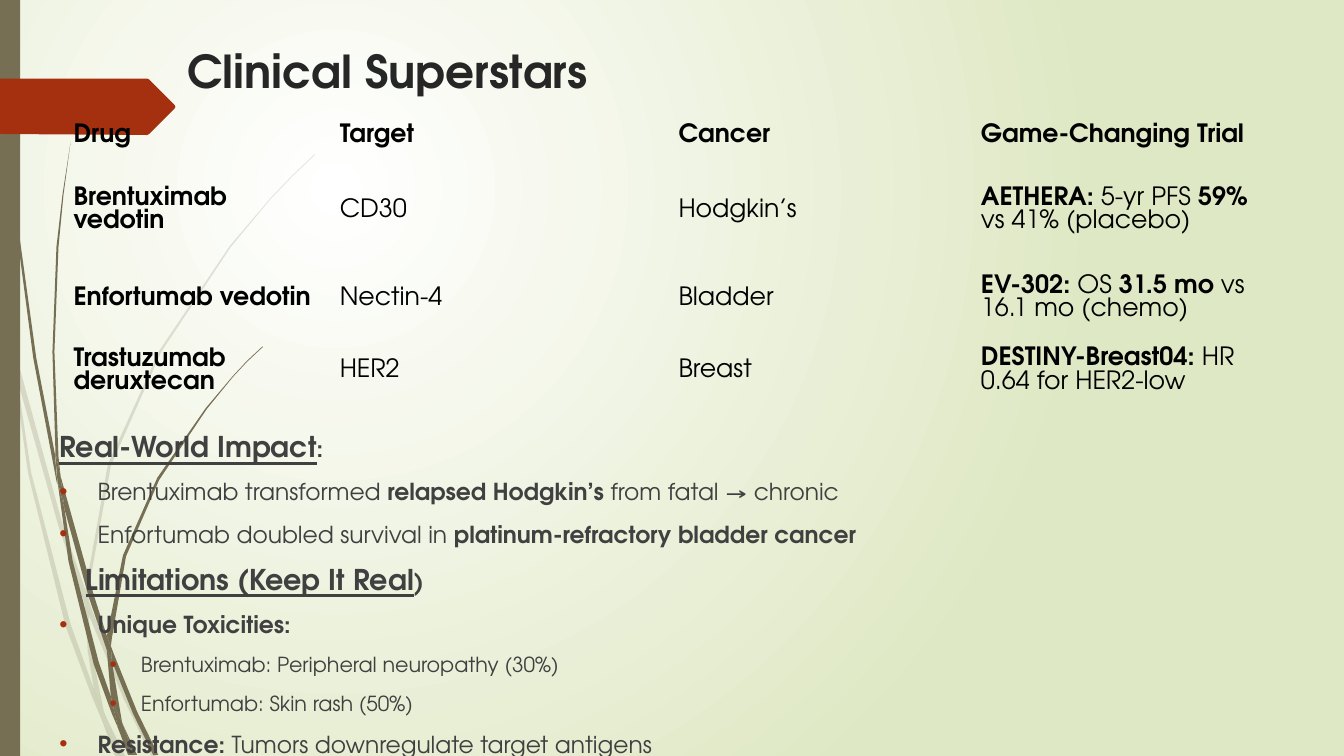
from dataclasses import dataclass
from lxml import etree
from pptx import Presentation
from pptx import util as u
from pptx.dml.color import RGBColor
from pptx.enum import shapes, text
from pptx.oxml.ns import qn

TITLE = "Clinical Superstars"
TRIALS = [
    ["**Drug**", "**Target**", "**Cancer**", "**Game-Changing Trial**"],
    ["**Brentuximab vedotin**", "CD30", "Hodgkin’s",
     "**AETHERA:** 5-yr PFS **59%** vs 41% (placebo)"],
    ["**Enfortumab vedotin**", "Nectin-4", "Bladder",
     "**EV-302:** OS **31.5 mo** vs 16.1 mo (chemo)"],
    ["**Trastuzumab deruxtecan**", "HER2", "Breast",
     "**DESTINY-Breast04:** HR 0.64 for HER2-low"],
]
NOTES = [
    ("heading", "Real-World Impact", ":"),
    ("bullet", "Brentuximab transformed **relapsed Hodgkin’s** from fatal → chronic"),
    ("bullet", "Enfortumab doubled survival in **platinum-refractory bladder cancer**"),
    ("subheading", "Limitations (Keep It Real", ")"),
    ("bullet", "**Unique Toxicities:**"),
    ("subbullet", "Brentuximab: Peripheral neuropathy (30%)"),
    ("subbullet", "Enfortumab: Skin rash (50%)"),
    ("bullet", "**Resistance: **Tumors downregulate target antigens"),
]
INDENTS = {"heading": (0, 0), "subheading": (0.26, 0),
           "bullet": (0.38, -0.38), "subbullet": (0.81, -0.31)}
COLUMNS = [2.64, 3.36, 3, 3]
ROWS = [0.46, 1.03, 0.72, 0.72]
PALE_STEMS = [
    [(0.58, 5.22), (0.84, 5.99), (0.85, 5.86), (0.62, 5.2), (0.14, 3.45), (0.17, 3.76)],
    [(0.92, 6.07), (0.88, 5.96), (0.88, 6.1), (1.23, 6.94), (1.5, 7.5), (1.55, 7.5),
     (1.27, 6.92)],
    [(1.19, 7.5), (1.24, 7.5), (1.05, 7.11)],
    [(0.93, 6.83), (0.7, 6.19), (0.31, 4.69), (0.17, 3.76), (0.11, 3.5), (0.28, 4.7),
     (0.65, 6.21), (0.92, 6.93), (1.01, 7.14), (0.99, 7.07)],
    [(0.84, 5.99), (0.87, 6.46), (0.93, 6.83), (0.96, 6.92), (1.05, 7.11), (1.03, 7.06),
     (0.91, 6.46), (0.88, 6.1), (0.88, 6.08)],
    [(0.88, 5.84), (1.1, 4.62), (1.6, 3.49), (2.29, 2.45), (2.68, 1.98), (2.9, 1.75),
     (3.12, 1.54), (3.12, 1.53), (2.89, 1.75), (2.68, 1.97), (2.28, 2.44), (1.58, 3.48),
     (1.07, 4.61), (0.85, 5.84), (0.85, 5.86), (0.88, 5.96)],
    [(1.01, 7.14), (1.14, 7.5), (1.19, 7.5)],
    [(0.88, 6.08), (0.88, 6.1), (0.88, 5.96), (0.85, 5.86), (0.84, 5.99)],
    [(0.96, 6.92), (0.93, 6.83), (0.99, 7.07), (1.01, 7.14), (1.19, 7.5), (1.05, 7.11)],
]
DARK_STEMS = [
    [(0.07, 1.1), (0.17, 2.33), (0.33, 3.55), (0.56, 4.77), (0.57, 4.81), (0.55, 4.57),
     (0.55, 4.53), (0.36, 3.55), (0.19, 2.32), (0.08, 1.09), (0.05, 0.48), (0.04, 0),
     (0.03, 0), (0.04, 0.48)],
    [(0.88, 5.92), (1.06, 6.45), (1.06, 6.33), (1.06, 6.31), (0.93, 5.9), (0.6, 4.72),
     (0.64, 5.05)],
    [(1.13, 6.49), (1.1, 6.41), (1.11, 6.56), (1.32, 7.08), (1.52, 7.49), (1.57, 7.49),
     (1.36, 7.06)],
    [(1.1, 6.91), (0.98, 6.57), (0.72, 5.56), (0.64, 5.05), (0.57, 4.77), (0.68, 5.57),
     (0.93, 6.59), (1.11, 7.08), (1.17, 7.22), (1.16, 7.17)],
    [(0.6, 4.72), (0.58, 4.53), (0.54, 3.49), (0.58, 2.45), (0.63, 1.93), (0.7, 1.41),
     (0.62, 1.93), (0.56, 2.45), (0.52, 3.49), (0.55, 4.49)],
    [(1.33, 7.49), (1.36, 7.49), (1.22, 7.19)],
    [(0.57, 4.77), (0.64, 5.05), (0.6, 4.72), (0.55, 4.49), (0.55, 4.53)],
    [(1.11, 6.33), (1.25, 5.52), (1.58, 4.76), (2.05, 4.06), (2.31, 3.74), (2.45, 3.59),
     (2.61, 3.44), (2.6, 3.44), (2.45, 3.58), (2.31, 3.73), (2.04, 4.05), (1.56, 4.74),
     (1.22, 5.51), (1.06, 6.31), (1.1, 6.41)],
    [(1.17, 7.22), (1.27, 7.49), (1.31, 7.49)],
    [(1.06, 6.45), (1.1, 6.91), (1.16, 7.06), (1.22, 7.19), (1.21, 7.16), (1.11, 6.56),
     (1.09, 6.51)],
    [(1.06, 6.45), (1.09, 6.51), (1.11, 6.56), (1.1, 6.41), (1.06, 6.31), (1.06, 6.33)],
    [(1.1, 6.91), (1.16, 7.17), (1.17, 7.22), (1.3, 7.49), (1.33, 7.49), (1.22, 7.19),
     (1.16, 7.06)],
]
ARROW = [(0, 0.78), (1.46, 0.78), (1.48, 0.79), (1.73, 1.04), (1.74, 1.06), (1.73, 1.08),
         (1.48, 1.33), (1.46, 1.34), (0, 1.33)]


@dataclass(frozen=True)
class Theme:
    font: str = "TeX Gyre Adventor"
    olive: str = "766F54"
    rust: str = "A53010"
    title: str = "262626"
    body: str = "404040"
    table: str = "000000"
    glow: tuple = ("FFFFFF", "DFE8C4")
    title_size: float = 32.4
    heading_size: float = 20.4
    table_size: float = 18
    body_size: float = 16.7
    small_size: float = 14.8


THEME = Theme()


def add_span(para, words, size, color, bold=False, underline=False):
    span = para.add_run()
    span.text = words
    font = span.font
    font.name, font.size, font.bold = THEME.font, u.Pt(size), bold
    font.underline = underline
    font.color.rgb = RGBColor.from_string(color)


def add_marked(para, words, size, color):
    for index, part in enumerate(words.split("**")):
        if part:
            add_span(para, part, size, color, bold=index % 2 == 1)


def paint(shape, color, alpha=None):
    shape.shadow.inherit = False
    shape.fill.solid()
    shape.fill.fore_color.rgb = RGBColor.from_string(color)
    shape.line.fill.background()
    if alpha:
        tint = shape.element.spPr.find(f"{qn('a:solidFill')}/{qn('a:srgbClr')}")
        etree.SubElement(tint, qn("a:alpha"), val=str(alpha * 1000))


def add_outline(parent, points, color, alpha=None):
    corners = [(u.Inches(x), u.Inches(y)) for x, y in points]
    builder = parent.build_freeform(*corners[0])
    builder.add_line_segments(corners[1:], close=True)
    paint(builder.convert_to_shape(), color, alpha)


def add_box(page, left, top, width, height):
    box = page.shapes.add_textbox(*map(u.Inches, (left, top, width, height)))
    box.text_frame.word_wrap = True
    return box.text_frame


def add_bullet(para):
    props = para._p.get_or_add_pPr()
    color = etree.SubElement(props, qn("a:buClr"))
    etree.SubElement(color, qn("a:srgbClr"), val=THEME.rust)
    etree.SubElement(props, qn("a:buFont"), typeface="Arial")
    etree.SubElement(props, qn("a:buChar"), char="•")


def add_background(page):
    fill = page.background.fill
    fill.gradient()
    for stop, color in zip(fill.gradient_stops, THEME.glow):
        stop.color.rgb = RGBColor.from_string(color)
    grad = page.element.find(f".//{qn('a:gradFill')}")
    for position, stop in zip((0, 100000), grad.iter(qn("a:gs"))):
        stop.set("pos", str(position))
    grad.remove(grad.find(qn("a:lin")))
    circle = etree.SubElement(grad, qn("a:path"), path="circle")
    etree.SubElement(circle, qn("a:fillToRect"), l="50000", t="50000", r="100000", b="100000")


def add_decoration(page, height):
    for stems, alpha in ((PALE_STEMS, 20), (DARK_STEMS, None)):
        group = page.shapes.add_group_shape()
        for stem in stems:
            add_outline(group.shapes, stem, THEME.olive, alpha)
    bar = page.shapes.add_shape(shapes.MSO_SHAPE.RECTANGLE, 0, 0, u.Inches(0.2), height)
    paint(bar, THEME.olive)
    add_outline(page.shapes, ARROW, THEME.rust)


def add_notes(page):
    frame = add_box(page, 0.49, 4.21, 11.5, 3.29)
    for index, (kind, words, *tail) in enumerate(NOTES):
        para = frame.paragraphs[0] if index == 0 else frame.add_paragraph()
        para.space_before = u.Pt(10 if index else 0)
        margin, indent = INDENTS[kind]
        props = para._p.get_or_add_pPr()
        props.set("marL", str(u.Inches(margin)))
        props.set("indent", str(u.Inches(indent)))
        if tail:
            add_span(para, words, THEME.heading_size, THEME.body, True, True)
            add_span(para, tail[0], THEME.body_size, THEME.body, True)
        else:
            para.level = int(kind == "subbullet")
            add_bullet(para)
            add_marked(para, words, THEME.small_size if para.level else THEME.body_size,
                       THEME.body)


def add_trials(page):
    frame = page.shapes.add_table(len(ROWS), len(COLUMNS), *map(
        u.Inches, (0.63, 1.11, sum(COLUMNS), sum(ROWS))))
    table = frame.table
    table.first_row = table.horz_banding = False
    style = table._tbl.tblPr.find(qn("a:tableStyleId"))
    style.text = "{2D5ABB26-0587-4C30-8999-92F81FD0307C}"
    for column, width in zip(table.columns, COLUMNS):
        column.width = u.Inches(width)
    for row, height, entries in zip(table.rows, ROWS, TRIALS):
        row.height = u.Inches(height)
        for cell, words in zip(row.cells, entries):
            cell.fill.background()
            cell.vertical_anchor = text.MSO_ANCHOR.MIDDLE
            add_marked(cell.text_frame.paragraphs[0], words, THEME.table_size, THEME.table)


def main():
    deck = Presentation()
    deck.slide_width, deck.slide_height = u.Inches(13.33), u.Inches(7.5)
    page = deck.slides.add_slide(deck.slide_layouts[6])
    add_background(page)
    add_decoration(page, deck.slide_height)
    title = add_box(page, 1.76, 0.38, 9.75, 0.91)
    add_span(title.paragraphs[0], TITLE, THEME.title_size, THEME.title, True)
    add_notes(page)
    add_trials(page)
    deck.save("out.pptx")


if __name__ == "__main__":
    main()
